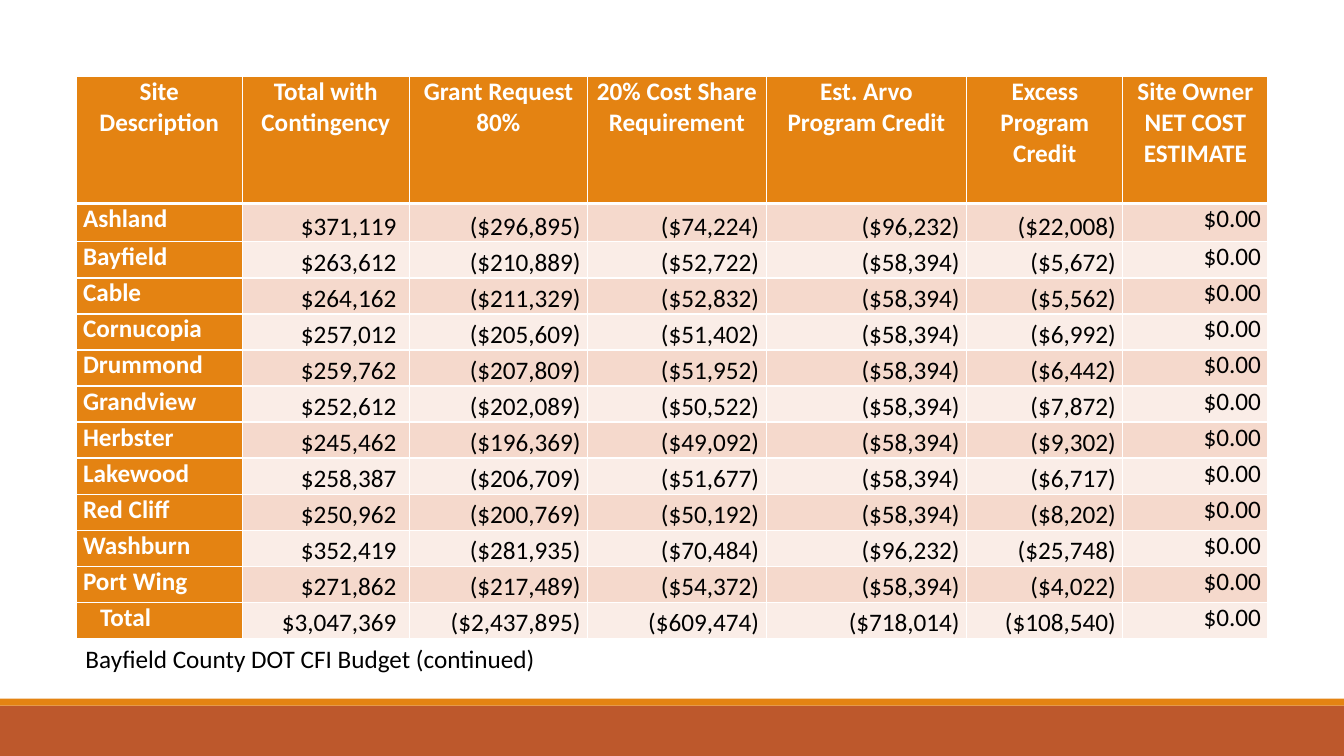
from lxml.etree import SubElement
from pptx import Presentation
from pptx.dml.color import RGBColor
from pptx.enum.shapes import MSO_SHAPE as Shape
from pptx.enum.text import MSO_ANCHOR as Anchor, MSO_AUTO_SIZE as AutoSize, PP_ALIGN as Align
from pptx.oxml.ns import qn
from pptx.util import Pt

PAGE_WIDTH, PAGE_HEIGHT = 960, 540
ORANGE, RUST, WHITE, BLACK = "E48312", "BD582C", "FFFFFF", "000000"
BANDS = ("F5D9CC", "FAEDE7")

COLUMN_WIDTHS = (118.8, 119.2, 127.5, 127.5, 143.3, 111.5, 103.7)
HEADER_HEIGHT, FIRST_HEIGHT, ROW_HEIGHT = 90.7, 27.4, 25.75
INSET, SPACE = 5, 4.07

HEADINGS = (
    "Site Description", "Total with Contingency", "Grant Request 80%",
    "20% Cost Share Requirement", "Est. Arvo Program Credit",
    "Excess Program Credit", "Site Owner NET COST ESTIMATE",
)
SITES = (
    ("Ashland", "$371,119", "($296,895)", "($74,224)", "($96,232)", "($22,008)"),
    ("Bayfield", "$263,612", "($210,889)", "($52,722)", "($58,394)", "($5,672)"),
    ("Cable", "$264,162", "($211,329)", "($52,832)", "($58,394)", "($5,562)"),
    ("Cornucopia", "$257,012", "($205,609)", "($51,402)", "($58,394)", "($6,992)"),
    ("Drummond", "$259,762", "($207,809)", "($51,952)", "($58,394)", "($6,442)"),
    ("Grandview", "$252,612", "($202,089)", "($50,522)", "($58,394)", "($7,872)"),
    ("Herbster", "$245,462", "($196,369)", "($49,092)", "($58,394)", "($9,302)"),
    ("Lakewood", "$258,387", "($206,709)", "($51,677)", "($58,394)", "($6,717)"),
    ("Red Cliff", "$250,962", "($200,769)", "($50,192)", "($58,394)", "($8,202)"),
    ("Washburn", "$352,419", "($281,935)", "($70,484)", "($96,232)", "($25,748)"),
    ("Port Wing", "$271,862", "($217,489)", "($54,372)", "($58,394)", "($4,022)"),
    ("Total", "$3,047,369", "($2,437,895)", "($609,474)", "($718,014)", "($108,540)"),
)
NET_COST = "$0.00"


def paint(target, color):
    target.fill.solid()
    target.fill.fore_color.rgb = RGBColor.from_string(color)


def write(frame, text, color=BLACK, bold=False, align=Align.LEFT, size=18):
    para = frame.paragraphs[0]
    para.alignment = align
    span = para.add_run()
    span.text = text
    span.font.name = "Calibri"
    span.font.size = Pt(size)
    span.font.bold = bold
    span.font.color.rgb = RGBColor.from_string(color)


def add_borders(cell, top=1, bottom=1):
    """Draw white cell borders; they must precede the fill in the XML."""
    properties = cell._tc.get_or_add_tcPr()
    for side, width in (("L", 1), ("R", 1), ("T", top), ("B", bottom)):
        line = SubElement(properties, qn(f"a:ln{side}"), w=str(Pt(width)))
        fill = SubElement(line, qn("a:solidFill"))
        SubElement(fill, qn("a:srgbClr"), val=WHITE)


def fill_cell(cell, text, fill, left=INSET, right=INSET, anchor=Anchor.TOP,
              top=1, bottom=1, **text_format):
    cell.margin_left, cell.margin_right = Pt(left), Pt(right)
    cell.margin_top = cell.margin_bottom = 0
    cell.vertical_anchor = anchor
    add_borders(cell, top, bottom)
    paint(cell, fill)
    write(cell.text_frame, text, **text_format)


def add_budget_table(page, left, top):
    heights = [HEADER_HEIGHT, FIRST_HEIGHT] + [ROW_HEIGHT] * (len(SITES) - 1)
    table = page.shapes.add_table(
        len(heights), len(COLUMN_WIDTHS), Pt(left), Pt(top),
        Pt(sum(COLUMN_WIDTHS)), Pt(sum(heights))).table
    table.horz_banding = False
    for column, width in zip(table.columns, COLUMN_WIDTHS):
        column.width = Pt(width)
    for row, height in zip(table.rows, heights):
        row.height = Pt(height)

    # Header row
    for index, heading in enumerate(HEADINGS):
        fill_cell(table.cell(0, index), heading, ORANGE, bottom=3,
                  color=WHITE, bold=True, align=Align.CENTER)

    # Site names, then amounts on alternating bands
    for number, (site, *amounts) in enumerate(SITES, start=1):
        top_line = 3 if number == 1 else 1
        indent = 3 * SPACE if site == "Total" else 0
        fill_cell(table.cell(number, 0), site, ORANGE, left=INSET + indent,
                  top=top_line, color=WHITE, bold=True)
        band = BANDS[(number - 1) % 2]
        for index, amount in enumerate(amounts, start=1):
            fill_cell(table.cell(number, index), amount, band,
                      right=INSET + (SPACE if index == 1 else 0),
                      anchor=Anchor.BOTTOM, top=top_line, align=Align.RIGHT)
        fill_cell(table.cell(number, len(HEADINGS) - 1), NET_COST, band,
                  top=top_line, align=Align.RIGHT)


def add_caption(page, left, top, width, height):
    box = page.shapes.add_textbox(Pt(left), Pt(top), Pt(width), Pt(height))
    box.text_frame.word_wrap = True
    box.text_frame.auto_size = AutoSize.SHAPE_TO_FIT_TEXT
    write(box.text_frame, "Bayfield County DOT CFI Budget (continued)")


def add_footer(page, left, top, width, height, stripe=5):
    for y, depth, color in ((top + stripe, height - stripe, RUST), (top, stripe, ORANGE)):
        bar = page.shapes.add_shape(Shape.RECTANGLE, Pt(left), Pt(y), Pt(width), Pt(depth))
        bar.shadow.inherit = False
        bar.line.fill.background()
        paint(bar, color)


def main():
    deck = Presentation()
    deck.slide_width, deck.slide_height = Pt(PAGE_WIDTH), Pt(PAGE_HEIGHT)
    page = deck.slides.add_slide(deck.slide_layouts[6])
    paint(page.background, WHITE)
    add_footer(page, 0, 499, PAGE_WIDTH, PAGE_HEIGHT - 499)
    add_caption(page, 54, 456, 386.6, 29)
    add_budget_table(page, 54.3, 54.7)
    deck.save("out.pptx")


if __name__ == "__main__":
    main()
